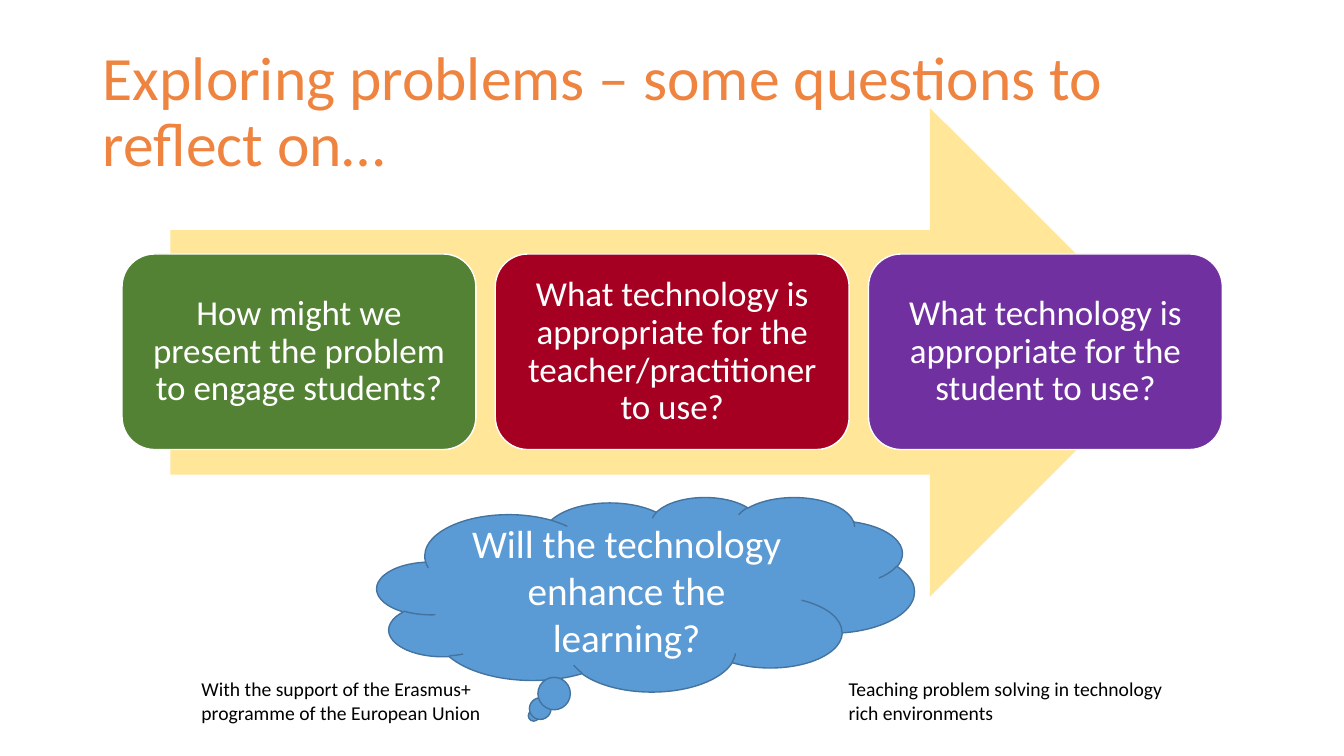
from pptx import Presentation
from pptx.dml.color import RGBColor
from pptx.enum.shapes import MSO_SHAPE
from pptx.enum.text import MSO_ANCHOR, MSO_AUTO_SIZE, PP_ALIGN
from pptx.util import Inches, Pt

WIDE, HIGH = Inches(13.33), Inches(7.5)
FONT = "Calibri"
WHITE, BLACK, ORANGE = "FFFFFF", "000000", "EF8440"
SAND, SKY, NAVY = "FFE699", "5B9BD5", "43739E"

CARDS = [
    ("How might we present the problem to engage students?", "548235"),
    ("What technology is appropriate for the teacher/practitioner to use?", "A50021"),
    ("What technology is appropriate for the student to use?", "7030A0"),
]
CARD_LEFT, CARD_STEP = 9.08, 27.77
NOTES = [
    ("With the support of the Erasmus+ programme of the European Union", 14.25, 25.8),
    ("Teaching problem solving in technology rich environments", 62.4, 26.93),
]


def area(left, top, width, height):
    """Turn percentages of the slide's size into lengths."""
    return [round(share * side / 100) for share, side in
            ((left, WIDE), (top, HIGH), (width, WIDE), (height, HIGH))]


def paint(target, color):
    target.rgb = RGBColor.from_string(color)


def write(shape, text, size, color, align=PP_ALIGN.LEFT,
          anchor=MSO_ANCHOR.MIDDLE, spacing=1.0):
    frame = shape.text_frame
    frame.word_wrap = True
    frame.auto_size = MSO_AUTO_SIZE.NONE
    frame.vertical_anchor = anchor
    para = frame.paragraphs[0]
    para.alignment = align
    para.line_spacing = spacing
    run = para.add_run()
    run.text = text
    run.font.name = FONT
    run.font.size = Pt(size)
    paint(run.font.color, color)


def add_form(slide, kind, place, fill, line=None):
    shape = slide.shapes.add_shape(kind, *area(*place))
    shape.shadow.inherit = False
    shape.fill.solid()
    paint(shape.fill.fore_color, fill)
    if line:
        paint(shape.line.color, line)
        shape.line.width = Pt(1)
    else:
        shape.line.fill.background()
    return shape


def add_card(slide, index, text, fill):
    place = (CARD_LEFT + index * CARD_STEP, 33.6, 26.33, 25.87)
    card = add_form(slide, MSO_SHAPE.ROUNDED_RECTANGLE, place, fill, WHITE)
    frame = card.text_frame
    frame.margin_left = frame.margin_right = Inches(0.1)
    frame.margin_top = frame.margin_bottom = Inches(0.1)
    write(card, text, 25, WHITE, PP_ALIGN.CENTER, spacing=0.9)


def add_note(slide, text, left, width):
    box = slide.shapes.add_textbox(*area(left, 88.93, width, 7.8))
    write(box, text, 14, BLACK, anchor=MSO_ANCHOR.TOP)


def add_cloud(slide, text):
    place = (28.05, 65.73, 39.98, 25.73)
    cloud = add_form(slide, MSO_SHAPE.CLOUD_CALLOUT, place, SKY, NAVY)
    write(cloud, text, 28, WHITE, PP_ALIGN.CENTER)


def set_title(slide, text):
    """Fill the title and bring it in front of the arrow."""
    title = slide.shapes.title
    title.left, title.top, title.width, title.height = area(6.9, 5.33, 86.25, 19.33)
    write(title, text, 44, ORANGE, spacing=0.9)
    title.element.getparent().append(title.element)


def main():
    deck = Presentation()
    deck.slide_width, deck.slide_height = WIDE, HIGH
    slide = deck.slides.add_slide(deck.slide_layouts[5])
    for note in NOTES:
        add_note(slide, *note)
    add_form(slide, MSO_SHAPE.RIGHT_ARROW, (12.68, 14.27, 74.7, 64.67), SAND)
    for index, card in enumerate(CARDS):
        add_card(slide, index, *card)
    add_cloud(slide, "Will the technology enhance the learning?")
    set_title(slide, "Exploring problems – some questions to reflect on…")
    deck.save("out.pptx")


if __name__ == "__main__":
    main()
